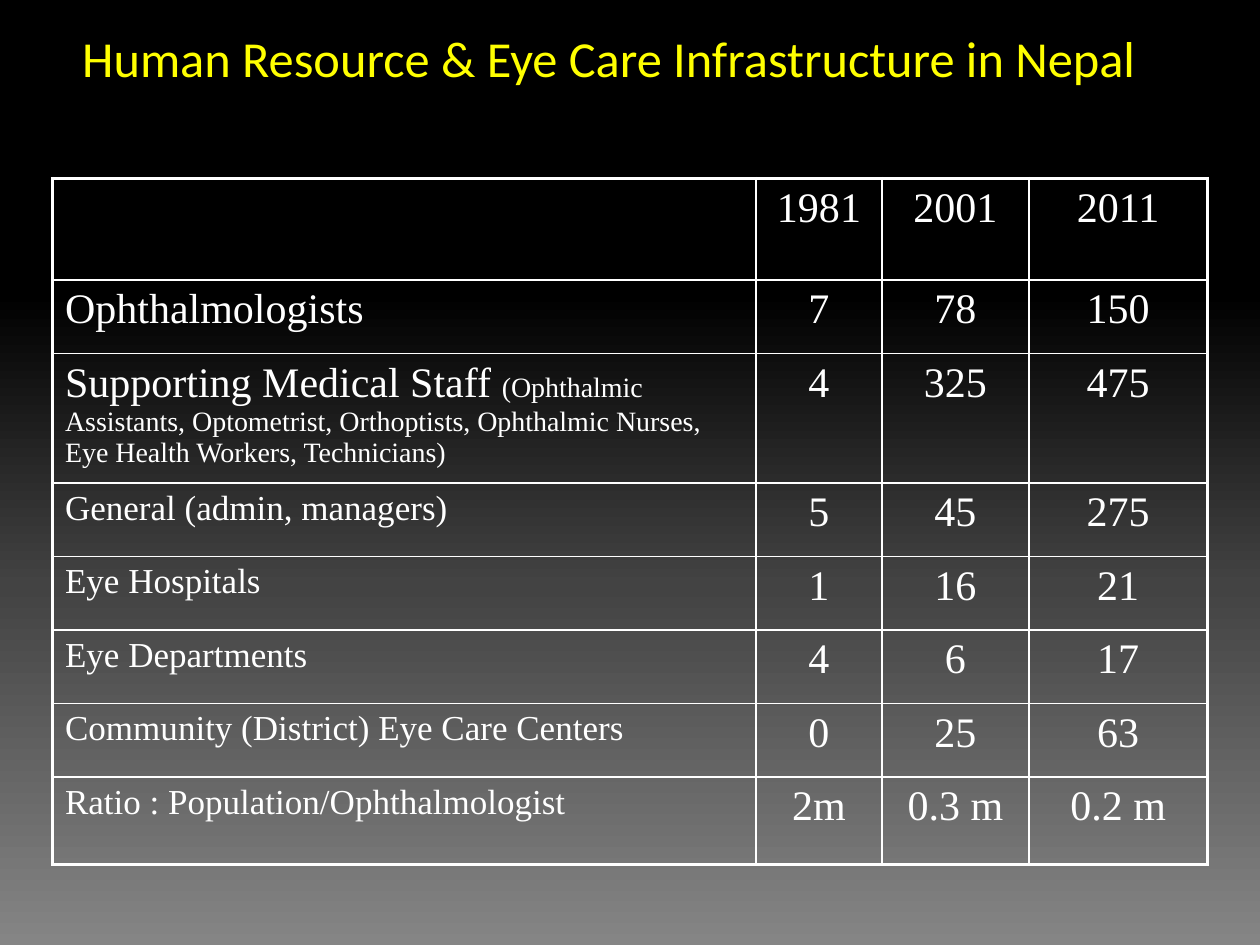
import copy

import pptx
import pptx.dml.color
import pptx.enum.text
import pptx.oxml
import pptx.oxml.ns
import pptx.util

Pt = pptx.util.Pt
RGBColor = pptx.dml.color.RGBColor
ALIGN = pptx.enum.text.PP_ALIGN
ANCHOR = pptx.enum.text.MSO_ANCHOR

BLACK = RGBColor(0x00, 0x00, 0x00)
DARK_GREY = RGBColor(0x43, 0x43, 0x43)
GREY = RGBColor(0x85, 0x85, 0x85)
WHITE = RGBColor(0xFF, 0xFF, 0xFF)
YELLOW = RGBColor(0xFF, 0xFF, 0x00)

BACKGROUND_STOPS = [(0, BLACK), (0.31, BLACK), (0.62, DARK_GREY), (1, GREY)]
COLUMN_WIDTHS = [402, 72, 84, 102]
ROW_HEIGHTS = [58, 42, 74, 42, 42, 42, 42, 50]
INNER_LINE, OUTER_LINE = 1, 2.25
VALUE_SIZE = 24

# Each row: label runs as (text, size), then the values by year
ROWS = [
    ([], ["1981", "2001", "2011"]),
    ([("Ophthalmologists", 24)], ["7", "78", "150"]),
    ([("Supporting Medical Staff ", 24),
      ("(Ophthalmic Assistants, Optometrist, Orthoptists, Ophthalmic Nurses, "
       "Eye Health Workers, Technicians)", 16)], ["4", "325", "475"]),
    ([("General (admin, managers)", 20)], ["5", "45", "275"]),
    ([("Eye Hospitals", 20)], ["1", "16", "21"]),
    ([("Eye Departments", 20)], ["4", "6", "17"]),
    ([("Community (District) Eye Care Centers", 20)], ["0", "25", "63"]),
    ([("Ratio : Population/Ophthalmologist", 20)], ["2m", "0.3 m", "0.2 m"]),
]


def add_run(p, text, size, font, color):
    r = p.add_run()
    r.text = text
    r.font.size = Pt(size)
    r.font.name = font
    r.font.color.rgb = color


def set_background(s):
    fill = s.background.fill
    fill.gradient()
    fill.gradient_angle = 270
    stop_list = s.element.xpath("p:cSld/p:bg//a:gsLst")[0]
    while len(stop_list) < len(BACKGROUND_STOPS):
        stop_list.append(copy.deepcopy(stop_list[0]))
    for stop, (position, color) in zip(fill.gradient_stops, BACKGROUND_STOPS):
        stop.position = position
        stop.color.rgb = color


def place_title(s, left, top, width, height):
    sp = s.shapes.title
    sp.left, sp.top, sp.width, sp.height = Pt(left), Pt(top), Pt(width), Pt(height)
    tf = sp.text_frame
    tf.word_wrap = True
    tf.vertical_anchor = ANCHOR.TOP
    p = tf.paragraphs[0]
    p.alignment = ALIGN.CENTER
    add_run(p, "Human Resource & Eye Care Infrastructure in Nepal", 28.8, "Calibri", YELLOW)


def set_borders(cell, widths):
    """Draw the cell's borders; widths maps L, R, T, B, in that order, to points."""
    tc_pr = cell._tc.get_or_add_tcPr()
    for i, (side, width) in enumerate(widths.items()):
        tc_pr.insert(i, pptx.oxml.parse_xml(
            f'<a:ln{side} {pptx.oxml.ns.nsdecls("a")} w="{Pt(width)}">'
            f'<a:solidFill><a:srgbClr val="{WHITE}"/></a:solidFill></a:ln{side}>'))


def add_staff_table(s, left, top, width, height):
    frame = s.shapes.add_table(len(ROWS), len(COLUMN_WIDTHS),
                               Pt(left), Pt(top), Pt(width), Pt(height))
    table = frame.table
    table.first_row = table.horz_banding = False
    for column, column_width in zip(table.columns, COLUMN_WIDTHS):
        column.width = Pt(column_width)
    last_row, last_column = len(ROWS) - 1, len(COLUMN_WIDTHS) - 1

    for i, (label, values) in enumerate(ROWS):
        table.rows[i].height = Pt(ROW_HEIGHTS[i])
        contents = [label] + [[(value, VALUE_SIZE)] for value in values]
        for j, runs in enumerate(contents):
            cell = table.cell(i, j)
            cell.fill.background()
            p = cell.text_frame.paragraphs[0]
            p.alignment = ALIGN.CENTER if j else ALIGN.LEFT
            for text, size in runs:
                add_run(p, text, size, "Times New Roman", WHITE)
            on_edge = {"L": j == 0, "R": j == last_column,
                       "T": i == 0, "B": i == last_row}
            set_borders(cell, {side: OUTER_LINE if outer else INNER_LINE
                               for side, outer in on_edge.items()})


def main():
    prs = pptx.Presentation()
    prs.slide_width, prs.slide_height = Pt(720), Pt(540)
    s = prs.slides.add_slide(prs.slide_layouts.get_by_name("Title Only"))
    set_background(s)
    place_title(s, 18, 12, 660, 72)
    add_staff_table(s, 30, 102, sum(COLUMN_WIDTHS), sum(ROW_HEIGHTS))
    prs.save("out.pptx")


if __name__ == "__main__":
    main()
